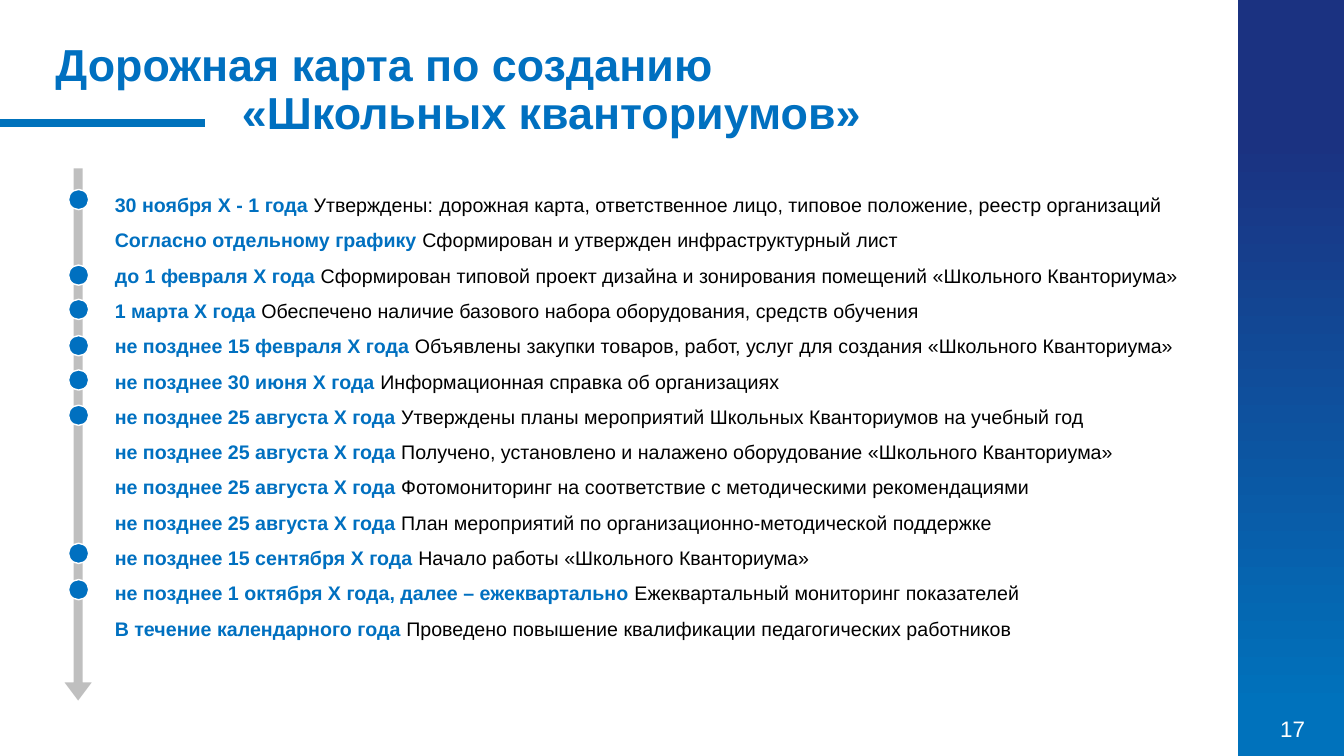
from dataclasses import dataclass

from lxml.etree import SubElement
from pptx import Presentation
from pptx.dml.color import RGBColor as RGB
from pptx.enum.shapes import MSO_CONNECTOR as CONNECTOR, MSO_SHAPE as SHAPE
from pptx.enum.text import MSO_ANCHOR as ANCHOR, MSO_AUTO_SIZE as AUTO, PP_ALIGN as ALIGN
from pptx.oxml.ns import qn
from pptx.util import Inches, Pt


@dataclass(frozen=True)
class Theme:
    font: str = "Arial"
    accent: RGB = RGB(0x00, 0x70, 0xC0)
    azure: RGB = RGB(0x00, 0x72, 0xBC)
    navy: RGB = RGB(0x1B, 0x32, 0x81)
    grey: RGB = RGB(0xBF, 0xBF, 0xBF)
    white: RGB = RGB(0xFF, 0xFF, 0xFF)
    black: RGB = RGB(0x00, 0x00, 0x00)
    title: int = 32
    body: int = 14
    spacer: int = 16
    number: int = 16


@dataclass(frozen=True)
class Box:
    x: float
    y: float
    w: float
    h: float

    def inches(self):
        return [Inches(v) for v in (self.x, self.y, self.w, self.h)]


T = Theme()
TITLE = ["Дорожная карта по созданию", "«Школьных кванториумов»"]
MILESTONES = [
    ("30 ноября X - 1 года ", "Утверждены:", " ",
     "дорожная карта, ответственное лицо, типовое положение, реестр организаций"),
    ("Согласно отдельному графику ", "Сформирован и утвержден инфраструктурный лист"),
    ("до 1 февраля X года ",
     "Сформирован типовой проект дизайна и зонирования помещений «Школьного Кванториума»"),
    ("1 марта X года ", "Обеспечено наличие базового набора оборудования, средств обучения"),
    ("не позднее 15 февраля X года ",
     "Объявлены закупки товаров, работ, услуг для создания «Школьного Кванториума»"),
    ("не позднее 30 июня X года ", "Информационная справка об организациях"),
    ("не позднее 25 августа X года ",
     "Утверждены планы мероприятий Школьных Кванториумов на учебный год"),
    ("не позднее 25 августа X года ",
     "Получено, установлено и налажено оборудование «Школьного Кванториума»"),
    ("не позднее 25 августа X года ",
     "Фотомониторинг на соответствие с методическими рекомендациями"),
    ("не позднее 25 августа X года ",
     "План мероприятий по организационно-методической поддержке"),
    ("не позднее 15 сентября X года ", "Начало работы «Школьного Кванториума»"),
    ("не позднее 1 октября X года, далее – ежеквартально ",
     "Ежеквартальный мониторинг показателей"),
    ("В течение календарного года ",
     "Проведено повышение квалификации педагогических работников"),
]
DOT_OFFSETS = [0.21, 0.96, 1.3, 1.66, 2.0, 2.35, 3.72, 4.08]


def add_run(p, text, size=T.body, color=T.black, bold=False):
    r = p.add_run()
    r.text = text
    r.font.name = T.font
    r.font.size = Pt(size)
    r.font.bold = bold
    r.font.color.rgb = color


def add_text_frame(s, box, anchor=ANCHOR.TOP, auto=AUTO.NONE):
    tf = s.shapes.add_textbox(*box.inches()).text_frame
    tf.word_wrap = True
    tf.vertical_anchor = anchor
    tf.auto_size = auto
    return tf


def add_paragraph(tf, index, spacing):
    p = tf.add_paragraph() if index else tf.paragraphs[0]
    p.line_spacing = spacing
    return p


def add_shape(s, kind, box, fill=None, line=None):
    sp = s.shapes.add_shape(kind, *box.inches())
    sp.shadow.inherit = False
    if fill is not None:
        sp.fill.solid()
        sp.fill.fore_color.rgb = fill
    if line is None:
        sp.line.fill.background()
    else:
        sp.line.color.rgb = line
        sp.line.width = Pt(1)
    return sp


def add_side_band(s, box):
    band = add_shape(s, SHAPE.RECTANGLE, box)
    band.fill.gradient()
    band.fill.gradient_angle = 270
    for stop, color, position in zip(band.fill.gradient_stops, (T.navy, T.azure), (0.18, 0.94)):
        stop.color.rgb = color
        stop.position = position
    tf = add_text_frame(s, Box(box.x + 0.14, box.y + 7.02, 0.8, 0.41), ANCHOR.MIDDLE)
    p = tf.paragraphs[0]
    p.alignment = ALIGN.CENTER
    add_run(p, "17", T.number, T.white)


def add_title(s, box):
    y = Inches(box.y + 0.85)
    rule = s.shapes.add_connector(CONNECTOR.STRAIGHT, 0, y, Inches(2.03), y)
    rule.line.color.rgb = T.azure
    rule.line.width = Pt(6)
    SubElement(rule._element.spPr, qn("a:effectLst"))
    tf = add_text_frame(s, box, ANCHOR.MIDDLE, AUTO.SHAPE_TO_FIT_TEXT)
    tf.margin_left = tf.margin_right = tf.margin_top = tf.margin_bottom = Inches(0.05)
    for i, text in enumerate(TITLE):
        p = add_paragraph(tf, i, 0.9)
        p._p.get_or_add_pPr().set("marL", str(Inches(1.85 * i)))
        add_run(p, text, T.title, T.accent, True)


def add_timeline(s, box):
    arrow = add_shape(s, SHAPE.DOWN_ARROW, Box(box.x, box.y, 0.27, box.h), T.grey)
    arrow.adjustments[0] = 0.333
    arrow.adjustments[1] = 0.667
    tf = add_text_frame(s, Box(box.x + 0.4, box.y + 0.03, box.w - 0.4, 4.75),
                        auto=AUTO.SHAPE_TO_FIT_TEXT)
    for i, (date, *parts) in enumerate(MILESTONES):
        p = add_paragraph(tf, i, 1.5)
        add_run(p, date, color=T.accent, bold=True)
        for text in parts:
            add_run(p, text, T.spacer if text == " " else T.body)
    for offset in DOT_OFFSETS:
        add_shape(s, SHAPE.OVAL, Box(box.x + 0.04, box.y + offset, 0.2, 0.2), T.accent, T.white)


def main():
    prs = Presentation()
    prs.slide_width, prs.slide_height = Inches(13.33), Inches(7.5)
    s = prs.slides.add_slide(prs.slide_layouts[6])
    add_side_band(s, Box(12.28, 0, 1.05, 7.5))
    add_title(s, Box(0.5, 0.37, 10.3, 1.07))
    add_timeline(s, Box(0.64, 1.67, 11.32, 5.28))
    prs.save("out.pptx")


if __name__ == "__main__":
    main()
